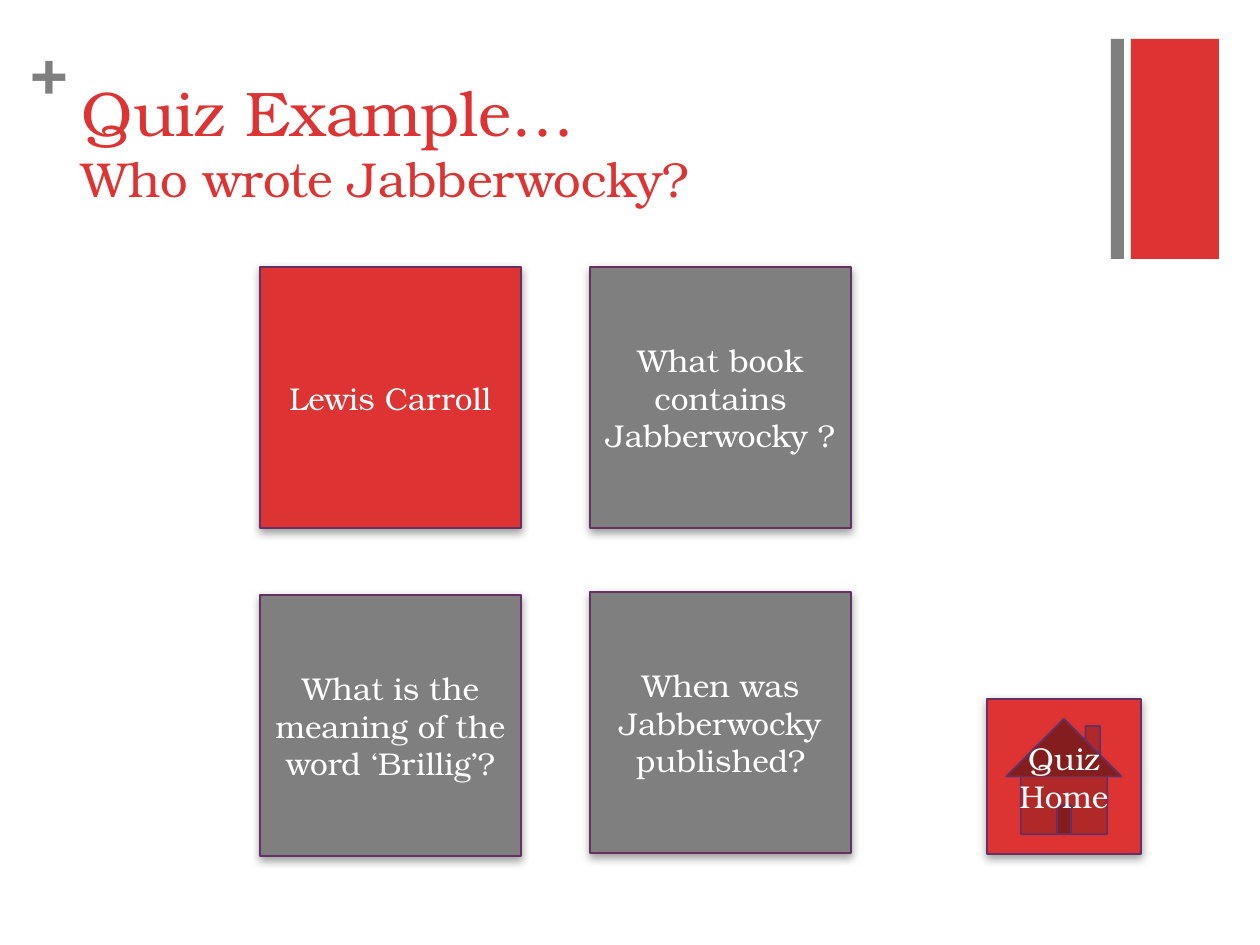
from pptx import Presentation
from pptx.dml.color import RGBColor
from pptx.enum.shapes import MSO_SHAPE
from pptx.enum.text import MSO_ANCHOR, PP_ALIGN
from pptx.oxml import parse_xml
from pptx.oxml.ns import qn
from pptx.util import Pt

RED = RGBColor(0xDD, 0x33, 0x33)
GRAY = RGBColor(0x7F, 0x7F, 0x7F)
PURPLE = RGBColor(0x65, 0x31, 0x65)
WHITE = RGBColor(0xFF, 0xFF, 0xFF)
RECT = MSO_SHAPE.RECTANGLE
BLANK_BUTTON = MSO_SHAPE.ACTION_BUTTON_CUSTOM
HOME_BUTTON = MSO_SHAPE.ACTION_BUTTON_HOME
MIDDLE, TOP = MSO_ANCHOR.MIDDLE, MSO_ANCHOR.TOP
CENTER, LEFT = PP_ALIGN.CENTER, PP_ALIGN.LEFT
PX = 914400 / 126
SHADOW = (
    '<a:outerShdw xmlns:a="http://schemas.openxmlformats.org/drawingml/2006/main"'
    ' blurRad="63500" dist="25400" dir="5400000" rotWithShape="0">'
    '<a:srgbClr val="808080"><a:alpha val="75000"/></a:srgbClr></a:outerShdw>'
)


class QuizSlide:
    """Draws quiz elements on one slide in a shared style."""

    font = "TeX Gyre Bonum"

    def __init__(self, prs):
        self.s = prs.slides.add_slide(prs.slide_layouts[6])

    def box(self, *px):
        return [round(v * PX) for v in px]

    def fill_text(self, tf, text, sizes, color, align=LEFT, anchor=TOP, bold=False):
        tf.text = text
        tf.word_wrap = True
        tf.vertical_anchor = anchor
        for p in tf.paragraphs:
            p.alignment = align
            for r, size in zip(p.runs, sizes):
                r.font.name = self.font
                r.font.size = Pt(size)
                r.font.bold = bold
                r.font.color.rgb = color

    def shape(self, kind, x, y, w, h, fill):
        sp = self.s.shapes.add_shape(kind, *self.box(x, y, w, h))
        sp.shadow.inherit = False
        sp.fill.solid()
        sp.fill.fore_color.rgb = fill
        sp.line.fill.background()
        return sp

    def button(self, kind, x, y, w, h, fill, text):
        sp = self.shape(kind, x, y, w, h, fill)
        sp.line.color.rgb = PURPLE
        sp.line.width = Pt(1)
        sp._element.spPr.find(qn("a:effectLst")).append(parse_xml(SHADOW))
        self.fill_text(sp.text_frame, text, [18], WHITE, CENTER, MIDDLE)

    def text(self, x, y, w, h, text, sizes, color, inset=None, bold=False):
        tf = self.s.shapes.add_textbox(*self.box(x, y, w, h)).text_frame
        if inset is not None:
            tf.margin_left = tf.margin_right = tf.margin_top = tf.margin_bottom = inset
        self.fill_text(tf, text, sizes, color, bold=bold)


def main():
    prs = Presentation()
    prs.slide_width, prs.slide_height = round(1260 * PX), round(945 * PX)
    quiz = QuizSlide(prs)

    quiz.shape(RECT, 1131, 39, 88, 220, RED)
    quiz.text(31, 31, 37, 77, "+", [36], GRAY, inset=0, bold=True)
    quiz.shape(RECT, 1111, 39, 13, 220, GRAY)
    quiz.text(69, 67, 1041, 154, "Quiz Example…\vWho wrote Jabberwocky?", [36, 28], RED)

    cards = [
        (260, 267, RED, "Lewis Carroll"),
        (590, 267, GRAY, "What book contains Jabberwocky ?"),
        (260, 595, GRAY, "What is the meaning of the word ‘Brillig’?"),
        (590, 592, GRAY, "When was Jabberwocky published?"),
    ]
    for x, y, fill, text in cards:
        quiz.button(BLANK_BUTTON, x, y, 261, 261, fill, text)
    quiz.button(HOME_BUTTON, 987, 699, 154, 155, RED, "Quiz\nHome")

    prs.save("out.pptx")


if __name__ == "__main__":
    main()
